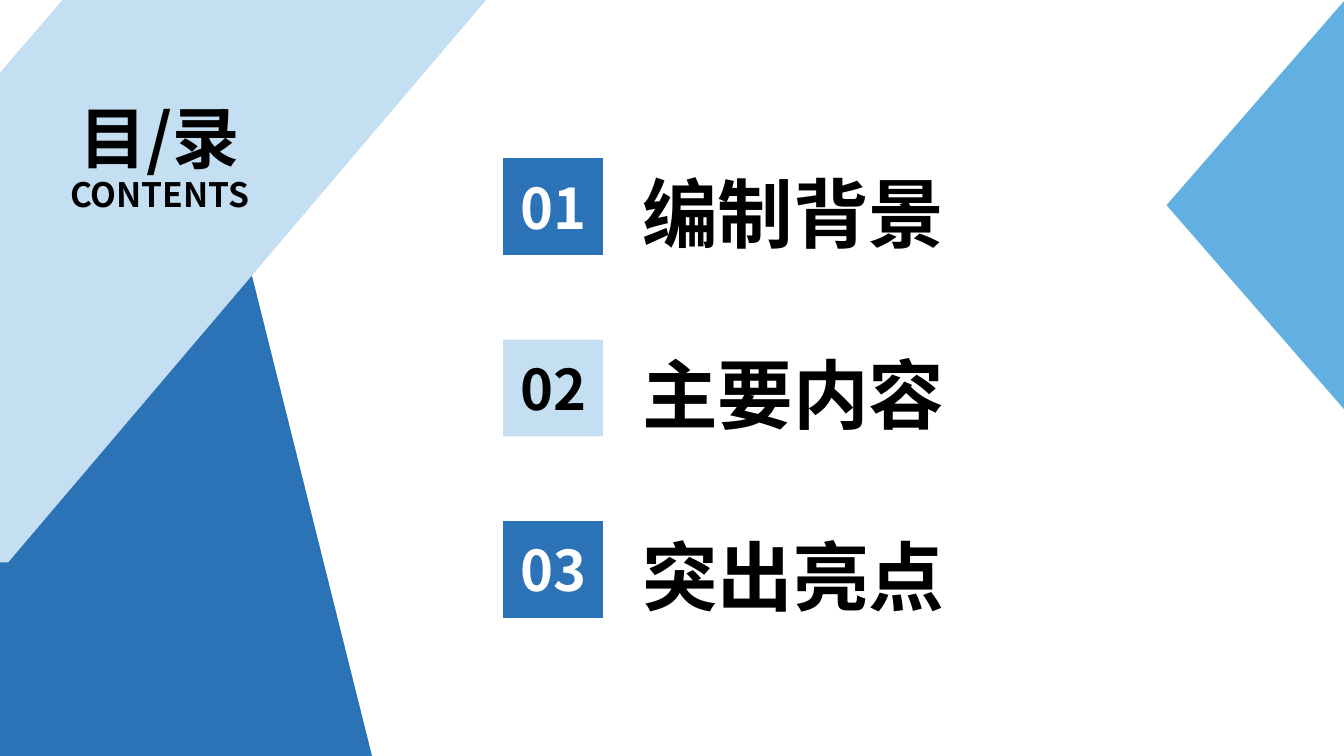
"""Build the contents slide: a heading, three numbered chapters and angular side panels."""
from pptx import Presentation
from pptx.dml.color import RGBColor
from pptx.enum.shapes import MSO_SHAPE as Preset
from pptx.enum.text import MSO_ANCHOR as Anchor, MSO_AUTO_SIZE as AutoSize, PP_ALIGN as Align
from pptx.oxml.ns import qn
from pptx.util import Inches, Pt

FONT = "Noto Sans CJK SC"
COLOURS = {"blue": "2C72B7", "pale": "C4DFF2", "sky": "61B0E1", "black": "000000", "white": "FFFFFF"}
HEADING = [("目/录", 48, 60), ("CONTENTS", 24, 27)]
CHAPTERS = [
    ("编制背景", "blue", "white"),
    ("主要内容", "pale", "black"),
    ("突出亮点", "blue", "white"),
]
PANELS = [
    ("blue", [(0, 2.58), (2.46, 2.58), (3.69, 7.5), (0, 7.5)]),
    ("pale", [(0.62, 0), (4.82, 0), (0.08, 5.58), (0, 5.58), (0, 0.72)]),
]
WIDTH, HEIGHT = 13.33, 7.5
HEADING_BOX = (0.4, 0.87, 2.37, 1.31)
ARROW_BOX = (10.42, 1.15, 4.07, 1.77)
FIRST_ROW, ROW_PITCH = 1.57, 1.8
BADGE_LEFT, BADGE_WIDTH, BADGE_HEIGHT = 4.99, 0.99, 0.96
NAME_LEFT, NAME_WIDTH, NAME_HEIGHT = 6.27, 5.74, 1.01


def colour(name):
    """Return the named colour."""
    return RGBColor.from_string(COLOURS[name])


def paint(shape, fill):
    """Give a shape a flat fill without outline or shadow."""
    shape.shadow.inherit = False
    shape.fill.solid()
    shape.fill.fore_color.rgb = colour(fill)
    shape.line.fill.background()


def write(shape, lines, ink, align, anchor):
    """Fill a shape with lines of (text, size, line spacing)."""
    frame = shape.text_frame
    settings = {"word_wrap": True, "auto_size": AutoSize.NONE, "vertical_anchor": anchor}
    for name, value in settings.items():
        setattr(frame, name, value)
    for index, (text, size, spacing) in enumerate(lines):
        paragraph = frame.add_paragraph() if index else frame.paragraphs[0]
        paragraph.alignment = align
        paragraph.line_spacing = Pt(spacing) if spacing else None
        run = paragraph.add_run()
        run.text = text
        for name, value in {"name": FONT, "size": Pt(size), "bold": True}.items():
            setattr(run.font, name, value)
        run.font.color.rgb = colour(ink)
        latin = run.font._element.find(qn("a:latin"))
        east_asian = latin.makeelement(qn("a:ea"), {"typeface": FONT})
        latin.addnext(east_asian)


def add_panels(slide):
    """Draw the angular panels on both sides."""
    arrow = slide.shapes.add_shape(Preset.ISOSCELES_TRIANGLE, *map(Inches, ARROW_BOX))
    arrow.rotation = 270
    paint(arrow, "sky")
    for fill, corners in PANELS:
        start, *others = [(Inches(x), Inches(y)) for x, y in corners]
        outline = slide.shapes.build_freeform(*start)
        outline.add_line_segments(others, close=True)
        paint(outline.convert_to_shape(), fill)


def add_heading(slide):
    """Place the title in front of the panels."""
    title = slide.shapes.title
    title.left, title.top, title.width, title.height = map(Inches, HEADING_BOX)
    write(title, HEADING, "black", Align.CENTER, Anchor.TOP)
    title.element.getparent().append(title.element)


def add_chapters(slide):
    """Add a numbered badge and a name for each chapter."""
    for index, (name, fill, ink) in enumerate(CHAPTERS):
        top = FIRST_ROW + index * ROW_PITCH
        badge_box = (BADGE_LEFT, top, BADGE_WIDTH, BADGE_HEIGHT)
        badge = slide.shapes.add_shape(Preset.RECTANGLE, *map(Inches, badge_box))
        paint(badge, fill)
        write(badge, [(f"{index + 1:02d}", 40, None)], ink, Align.CENTER, Anchor.MIDDLE)
        name_box = (NAME_LEFT, top - 0.01, NAME_WIDTH, NAME_HEIGHT)
        label = slide.shapes.add_textbox(*map(Inches, name_box))
        write(label, [(name, 54, 68)], "black", Align.LEFT, Anchor.TOP)


def main():
    """Build and save the presentation."""
    presentation = Presentation()
    presentation.slide_width, presentation.slide_height = Inches(WIDTH), Inches(HEIGHT)
    slide = presentation.slides.add_slide(presentation.slide_layouts[5])
    add_panels(slide)
    add_heading(slide)
    add_chapters(slide)
    presentation.save("out.pptx")


if __name__ == "__main__":
    main()
